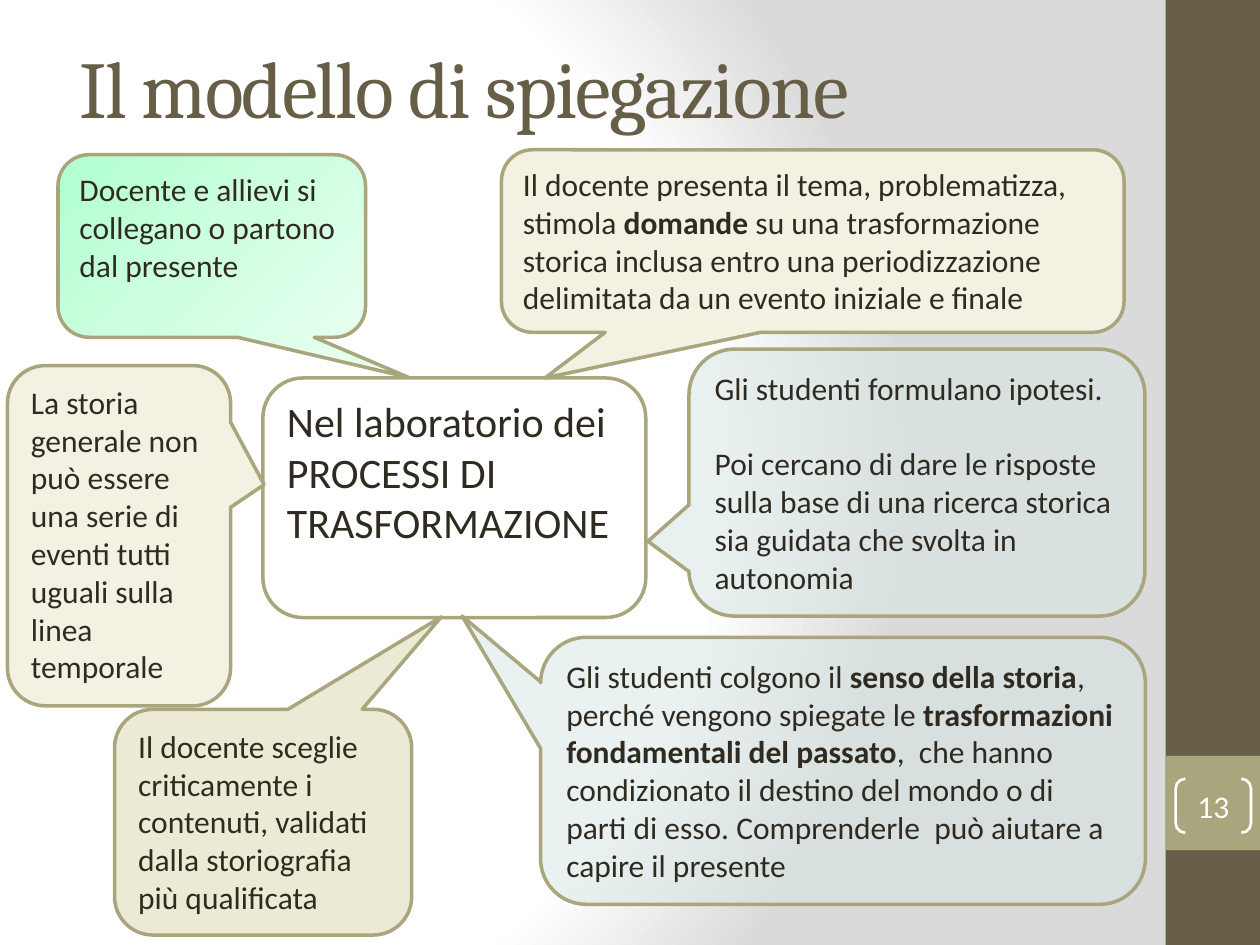
import pptx
import pptx.util
import pptx.dml.color
import pptx.enum.shapes
import pptx.enum.text
import pptx.oxml
import pptx.oxml.ns

Cm, Pt = pptx.util.Cm, pptx.util.Pt
Kind = pptx.enum.shapes.MSO_SHAPE
Anchor = pptx.enum.text.MSO_ANCHOR
Align = pptx.enum.text.PP_ALIGN
Fit = pptx.enum.text.MSO_AUTO_SIZE
qn = pptx.oxml.ns.qn

# Content: each paragraph is a list of runs, every second run is bold
TITLE = "Il modello di spiegazione"
NUMBER = "13"
CENTRE = [["Nel laboratorio dei PROCESSI DI TRASFORMAZIONE"]]
# Box in cm, tip of the callout, fill name, text
NOTES = [
    ((13.89, 7.04, 9.19, 5.38), (-0.59, 0.22), "ice",
     [["Gli studenti formulano ipotesi."],
      ["Poi cercano di dare le risposte sulla base di una ricerca storica "
       "sia guidata che svolta in autonomia"]]),
    ((1.17, 3.12, 6.2, 3.68), (0.64, 0.72), "mint",
     [["Docente e allievi si collegano o partono dal presente"]]),
    ((10.11, 3.02, 12.55, 3.68), (-0.43, 0.75), "cream",
     [["Il docente presenta il tema, problematizza, stimola ", "domande",
       " su una trasformazione storica inclusa entro una periodizzazione "
       "delimitata da un evento iniziale e finale"]]),
    ((10.9, 12.85, 12.19, 5.38), (-0.63, -0.58), "haze",
     [["Gli studenti colgono il ", "senso della storia",
       ", perché vengono spiegate le ",
       "trasformazioni fondamentali del passato",
       ",  che hanno condizionato il destino del mondo o di parti di esso. "
       "Comprenderle  può aiutare a capire il presente"]]),
    ((2.31, 14.3, 5.99, 4.55), (0.6, -0.91), "sand",
     [["Il docente sceglie criticamente i contenuti, validati dalla "
       "storiografia più qualificata"]]),
    ((0.15, 7.37, 4.5, 6.86), (0.65, -0.15), "cream",
     [["La storia generale non può essere una serie di eventi tutti uguali "
       "sulla linea temporale"]]),
]

# Fills are a colour, a colour with its opacity, or a list of gradient stops
THEME = {
    "head": "Cambria", "body": "Calibri",
    "big": 46, "mid": 24, "small": 18,
    "dark": "675E47", "olive": "A9A57C", "ink": "2F2B20", "white": "FFFFFF",
    "cream": "F2F1E2", "sand": "ECEAD4",
    "ice": ("D7E5E5", 56), "haze": ("D7E5E5", 52),
    "mint": [(0, "B0FFD0"), (50, "CDFFE0"), (100, "E6FFEF")],
    "back": [(0, "FFFFFF"), (75, "FFFFFF"), (100, "DADADA")],
}
SLOPE = '<a:lin ang="2700000" scaled="0"/>'
GLOW = ('<a:path path="circle"><a:fillToRect l="20000" t="50000" '
        'r="100000" b="50000"/></a:path>')


def rgb(name):
    return pptx.dml.color.RGBColor.from_string(THEME.get(name, name))


def apply(obj, **vals):
    for key, val in vals.items():
        setattr(obj, key, val)


def blend(fill, root, stops, tail):
    """Replace the first solid fill under root with a gradient."""
    fill.solid()
    old = root.find(".//" + qn("a:solidFill"))
    marks = "".join(f'<a:gs pos="{pos * 1000}"><a:srgbClr val="{hue}"/></a:gs>'
                    for pos, hue in stops)
    new = pptx.oxml.parse_xml(
        f'<a:gradFill {pptx.oxml.ns.nsdecls("a")} rotWithShape="1">'
        f'<a:gsLst>{marks}</a:gsLst>{tail}</a:gradFill>')
    old.getparent().replace(old, new)


def paint(shape, name):
    tone = THEME[name]
    if isinstance(tone, list):
        blend(shape.fill, shape.element, tone, SLOPE)
        return
    hue, alpha = tone if isinstance(tone, tuple) else (tone, 100)
    shape.fill.solid()
    shape.fill.fore_color.rgb = rgb(hue)
    if alpha < 100:
        mark = shape.element.find(".//" + qn("a:srgbClr"))
        mark.append(pptx.oxml.parse_xml(
            f'<a:alpha {pptx.oxml.ns.nsdecls("a")} val="{alpha * 1000}"/>'))


def draw(slide, kind, box, fill=None, line=None, width=2, adj=()):
    shape = slide.shapes.add_shape(kind, *map(Cm, box))
    shape.shadow.inherit = False
    for i, val in enumerate(adj):
        shape.adjustments[i] = val
    if fill:
        paint(shape, fill)
    else:
        shape.fill.background()
    if line:
        shape.line.color.rgb = rgb(line)
        shape.line.width = Pt(width)
    else:
        shape.line.fill.background()
    return shape


def write(shape, paras, size="small", face="body", hue="ink",
          align=Align.LEFT, **frame):
    text = shape.text_frame
    apply(text, word_wrap=True, **frame)
    for i, runs in enumerate(paras):
        para = text.add_paragraph() if i else text.paragraphs[0]
        para.alignment = align
        if i < len(paras) - 1:
            para.space_after = Pt(THEME[size] * 1.2)
        for j, words in enumerate(runs):
            run = para.add_run()
            run.text = words
            apply(run.font, name=THEME[face], size=Pt(THEME[size]),
                  bold=j % 2 == 1)
            run.font.color.rgb = rgb(hue)


def main():
    deck = pptx.Presentation()
    apply(deck, slide_width=Cm(25.4), slide_height=Cm(19.05))
    slide = deck.slides.add_slide(deck.slide_layouts[5])
    blend(slide.background.fill, slide.element, THEME["back"], GLOW)

    # Side band with the page number
    draw(slide, Kind.RECTANGLE, (23.5, 0, 1.9, 19.05), "dark")
    draw(slide, Kind.RECTANGLE, (23.5, 15.24, 1.9, 1.9), "olive")
    page = draw(slide, Kind.DOUBLE_BRACKET, (23.7, 15.7, 1.52, 1.09),
                line="white", width=1.5, adj=[0.18])
    write(page, [[NUMBER]], hue="white", align=Align.CENTER,
          vertical_anchor=Anchor.MIDDLE, margin_left=0, margin_right=0,
          margin_top=0, margin_bottom=0)

    # Title
    title = slide.shapes.title
    apply(title, left=Cm(1.35), top=Cm(0.15), width=Cm(21.16),
          height=Cm(3.18))
    write(title, [[TITLE]], "big", "head", "dark",
          vertical_anchor=Anchor.MIDDLE, auto_size=Fit.NONE)
    title.text_frame.paragraphs[0].runs[0].font._element.set("spc", "-100")

    # Centre box and the callouts that point to it
    look = {"vertical_anchor": Anchor.TOP, "auto_size": Fit.SHAPE_TO_FIT_TEXT}
    core = draw(slide, Kind.ROUNDED_RECTANGLE, (5.3, 7.62, 7.72, 4.83),
                "white", "olive")
    write(core, CENTRE, "mid", **look)
    for box, tip, fill, paras in NOTES:
        note = draw(slide, Kind.ROUNDED_RECTANGULAR_CALLOUT, box, fill,
                    "olive", adj=(*tip, 0.17))
        write(note, paras, **look)

    deck.save("out.pptx")


if __name__ == "__main__":
    main()
